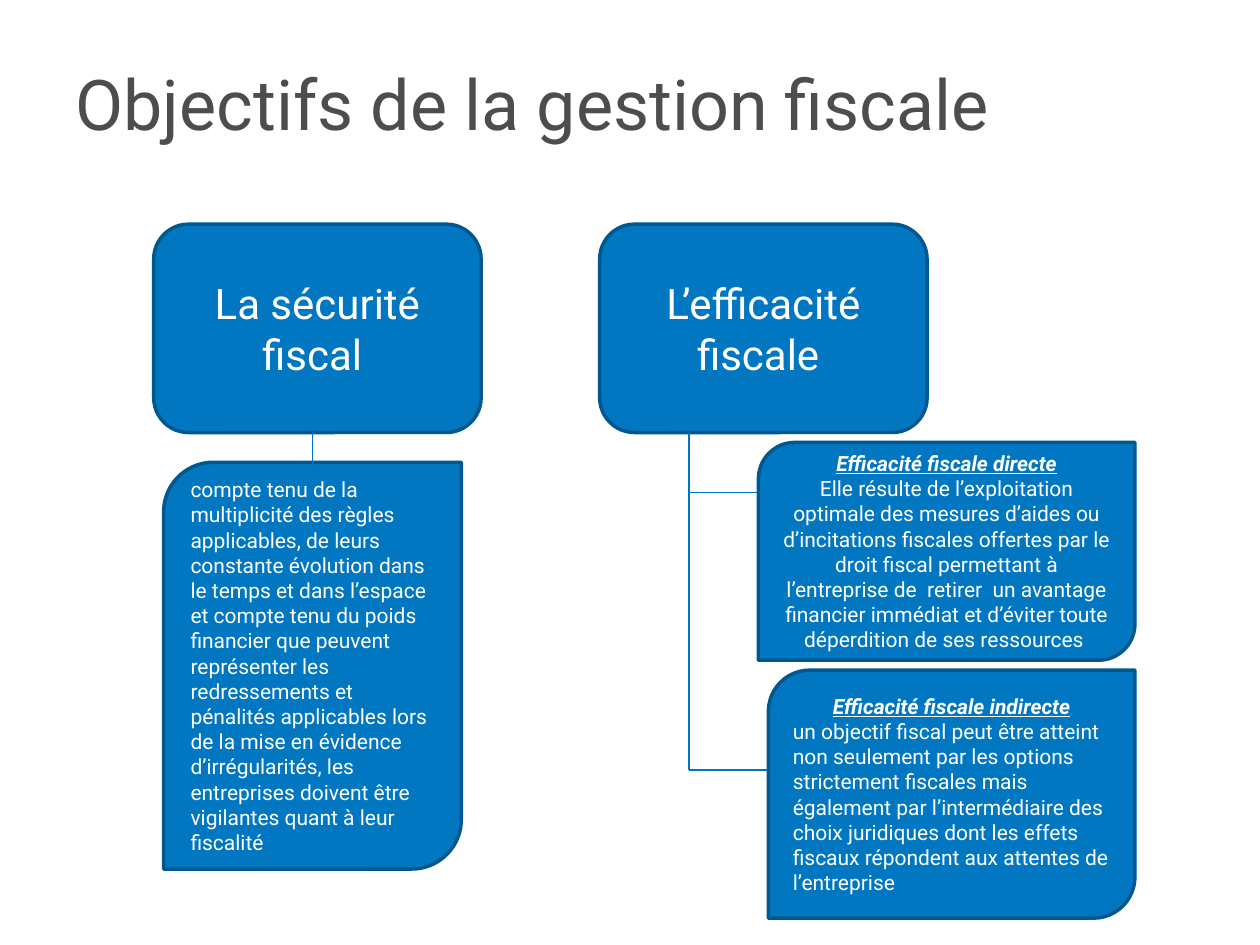
import pptx
import pptx.dml.color
import pptx.enum.shapes
import pptx.enum.text
import pptx.oxml.ns
import pptx.util
from lxml import etree

Cm = pptx.util.Cm
Shapes = pptx.enum.shapes.MSO_SHAPE
Align = pptx.enum.text.PP_ALIGN

COLORS = {
    "title": "4D4D4D",
    "box": "0077C0",
    "border": "00588E",
    "link": "0074BC",
    "text": "FFFFFF",
}


def rgb(name):
    return pptx.dml.color.RGBColor.from_string(COLORS[name])


class SlideBuilder:
    """Holds the font and the slide being filled; lengths are in centimetres."""

    def __init__(self, slide, font):
        self.slide = slide
        self.font = font

    def fill_text(self, frame, paragraphs, size, color):
        """Fill a frame from (text, alignment, is_heading) tuples."""
        frame.word_wrap = True
        frame.vertical_anchor = pptx.enum.text.MSO_ANCHOR.MIDDLE
        for index, (text, alignment, is_heading) in enumerate(paragraphs):
            paragraph = frame.add_paragraph() if index else frame.paragraphs[0]
            paragraph.alignment = alignment
            run = paragraph.add_run()
            run.text = text
            run.font.name = self.font
            run.font.size = pptx.util.Pt(size)
            run.font.color.rgb = rgb(color)
            if is_heading:
                run.font.bold = run.font.italic = run.font.underline = True

    def title(self, text, left, top, width, height):
        box = self.slide.shapes.add_textbox(Cm(left), Cm(top), Cm(width), Cm(height))
        self.fill_text(box.text_frame, [(text, Align.LEFT, False)], 40, "title")

    def box(self, outline, left, top, width, height, paragraphs, size):
        shape = self.slide.shapes.add_shape(
            outline, Cm(left), Cm(top), Cm(width), Cm(height))
        shape.shadow.inherit = False
        shape.fill.solid()
        shape.fill.fore_color.rgb = rgb("box")
        shape.line.color.rgb = rgb("border")
        shape.line.width = pptx.util.Pt(2)
        self.fill_text(shape.text_frame, paragraphs, size, "text")

    def goal(self, left, text):
        self.box(Shapes.ROUNDED_RECTANGLE, left, GOAL_TOP, 6.6, GOAL_HEIGHT,
                 [(text, Align.CENTER, False)], 24)

    def detail(self, left, top, width, height, paragraphs):
        self.box(Shapes.ROUND_2_DIAG_RECTANGLE, left, top, width, height,
                 paragraphs, 12)

    def link(self, x1, y1, x2, y2):
        line = self.slide.shapes.add_connector(
            pptx.enum.shapes.MSO_CONNECTOR.STRAIGHT, Cm(x1), Cm(y1), Cm(x2), Cm(y2))
        line.line.color.rgb = rgb("link")
        line.line.width = pptx.util.Pt(0.75)
        etree.SubElement(line._element.spPr, pptx.oxml.ns.qn("a:effectLst"))


GOAL_TOP, GOAL_HEIGHT = 4.52, 4.2
GOAL_BOTTOM = GOAL_TOP + GOAL_HEIGHT
TRUNK_X, DETAILS_RIGHT = 13.89, 22.88

SECURITY = (
    "compte tenu de la multiplicité des règles applicables, de leurs constante "
    "évolution dans le temps et dans l’espace et compte tenu du poids financier "
    "que peuvent représenter les redressements et pénalités applicables lors de "
    "la mise en évidence d’irrégularités, les entreprises doivent être vigilantes "
    "quant à leur fiscalité")
DIRECT = (
    "Elle résulte de l’exploitation optimale des mesures d’aides ou d’incitations "
    "fiscales offertes par le droit fiscal permettant à l’entreprise de  retirer  "
    "un avantage financier immédiat et d’éviter toute déperdition de ses "
    "ressources ")
INDIRECT = (
    "un objectif fiscal peut être atteint non seulement par les options "
    "strictement fiscales mais également par l’intermédiaire des choix juridiques "
    "dont les effets fiscaux répondent aux attentes de l’entreprise")

# heading, body, body alignment, left, top, height, height of the branch line
EFFICIENCY_KINDS = [
    ("Efficacité fiscale directe", DIRECT, Align.CENTER, 15.29, 8.92, 4.39, 9.93),
    ("Efficacité fiscale indirecte", INDIRECT, Align.LEFT, 15.49, 13.51, 5, 15.52),
]


def main():
    deck = pptx.Presentation()
    deck.slide_width, deck.slide_height = Cm(25.4), Cm(19.05)
    builder = SlideBuilder(deck.slides.add_slide(deck.slide_layouts[6]), "Roboto")

    builder.title("Objectifs de la gestion fiscale", 1.27, 1.07, 20.32, 1.98)
    builder.goal(3.1, "La sécurité fiscal ")
    builder.goal(12.09, "L’efficacité fiscale ")

    builder.detail(3.3, 9.32, 6, 8.2, [(SECURITY, Align.LEFT, False)])
    builder.link(6.3, GOAL_BOTTOM, 6.3, 9.52)

    builder.link(TRUNK_X, GOAL_BOTTOM, TRUNK_X, EFFICIENCY_KINDS[-1][-1])
    for heading, body, alignment, left, top, height, branch_y in EFFICIENCY_KINDS:
        builder.link(TRUNK_X, branch_y, left, branch_y)
        builder.detail(left, top, DETAILS_RIGHT - left, height,
                       [(heading, Align.CENTER, True), (body, alignment, False)])

    deck.save("out.pptx")


if __name__ == "__main__":
    main()
